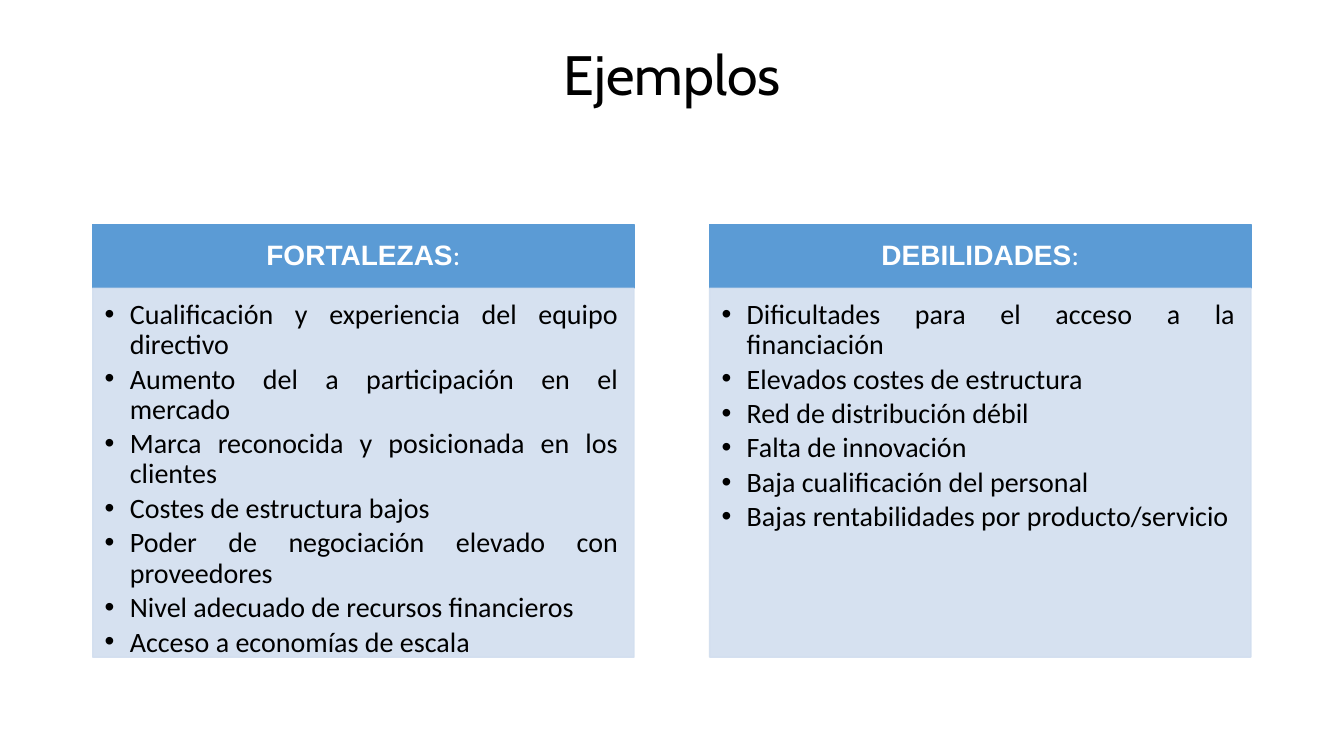
from lxml.etree import SubElement
from pptx import Presentation
from pptx.dml.color import RGBColor
from pptx.enum.shapes import MSO_SHAPE
from pptx.enum.text import MSO_ANCHOR, PP_ALIGN
from pptx.oxml.ns import qn
from pptx.util import Pt

COLORS = {"head": "5B9BD5", "body": "D2DEEF", "white": "FFFFFF", "black": "000000"}
LEFT, TOP, WIDTH, PITCH = 66.24, 160.56, 386.64, 440.64
HEAD, BODY = 45.36, 263.52

LISTS = [
    ("FORTALEZAS", [
        "Cualificación y experiencia del equipo directivo",
        "Aumento del a participación en el mercado",
        "Marca reconocida y posicionada en los clientes",
        "Costes de estructura bajos",
        "Poder de negociación elevado con proveedores",
        "Nivel adecuado de recursos financieros",
        "Acceso a economías de escala",
    ]),
    ("DEBILIDADES", [
        "Dificultades para el acceso a la financiación",
        "Elevados costes de estructura",
        "Red de distribución débil",
        "Falta de innovación",
        "Baja cualificación del personal",
        "Bajas rentabilidades por producto/servicio",
    ]),
]


class Deck:
    """Holds the text style and the current slide, and draws its elements."""

    def __init__(self, slide, size=20, font="Calibri"):
        self.slide, self.size, self.font = slide, size, font

    def color(self, name):
        return RGBColor.from_string(COLORS[name])

    def frame(self, shape, anchor, pads):
        frame = shape.text_frame
        frame.word_wrap = True
        frame.vertical_anchor = anchor
        frame.margin_left, frame.margin_top, frame.margin_right, frame.margin_bottom = map(Pt, pads)
        return frame

    def para(self, frame, first, align, after=0):
        para = frame.paragraphs[0] if first else frame.add_paragraph()
        para.alignment = align
        para.line_spacing = 0.9
        para.space_before, para.space_after = Pt(0), Pt(after)
        return para

    def run(self, para, text, color, font=None, size=None, bold=False):
        run = para.add_run()
        run.text = text
        run.font.name = font or self.font
        run.font.size = Pt(size or self.size)
        run.font.bold = bold
        run.font.color.rgb = self.color(color)

    def rect(self, left, top, width, height, color, alpha=None):
        shape = self.slide.shapes.add_shape(
            MSO_SHAPE.RECTANGLE, Pt(left), Pt(top), Pt(width), Pt(height))
        shape.shadow.inherit = False
        shape.line.width = Pt(1)
        for fill in (shape.fill, shape.line.fill):
            fill.solid()
            fill.fore_color.rgb = self.color(color)
        if alpha:
            for tone in shape._element.spPr.iter(qn("a:srgbClr")):
                SubElement(tone, qn("a:alpha"), val=str(alpha * 1000))
        return shape

    def title(self, text):
        box = self.slide.shapes.add_textbox(Pt(LEFT), Pt(28.8), Pt(828), Pt(52.56))
        frame = self.frame(box, MSO_ANCHOR.MIDDLE, (7.2, 3.6, 7.2, 3.6))
        para = self.para(frame, True, PP_ALIGN.CENTER)
        self.run(para, text, "black", "Cabin", 39.6)

    def head(self, left, text):
        shape = self.rect(left, TOP, WIDTH, HEAD, "head")
        frame = self.frame(shape, MSO_ANCHOR.MIDDLE, (11.2, 6.4, 11.2, 6.4))
        para = self.para(frame, True, PP_ALIGN.CENTER, 7)
        self.run(para, text, "white", "Arial", bold=True)
        self.run(para, ":", "white")

    def body(self, left, items):
        shape = self.rect(left, TOP + HEAD, WIDTH, BODY, "body", 90)
        frame = self.frame(shape, MSO_ANCHOR.TOP, (8.53, 8.53, 11.38, 12.8))
        for index, item in enumerate(items):
            para = self.para(frame, index == 0, PP_ALIGN.JUSTIFY, 3)
            para.level = 1
            props = para._p.get_or_add_pPr()
            props.set("marL", str(Pt(18)))
            props.set("indent", str(-Pt(18)))
            SubElement(props, qn("a:buFont"), typeface="Arial")
            SubElement(props, qn("a:buChar"), char="•")
            self.run(para, item, "black")


def main():
    show = Presentation()
    show.slide_width, show.slide_height = Pt(960), Pt(540)
    deck = Deck(show.slides.add_slide(show.slide_layouts[6]))
    for index, (name, items) in enumerate(LISTS):
        left = LEFT + index * PITCH
        deck.head(left, name)
        deck.body(left, items)
    deck.title("Ejemplos")
    show.save("out.pptx")


if __name__ == "__main__":
    main()
